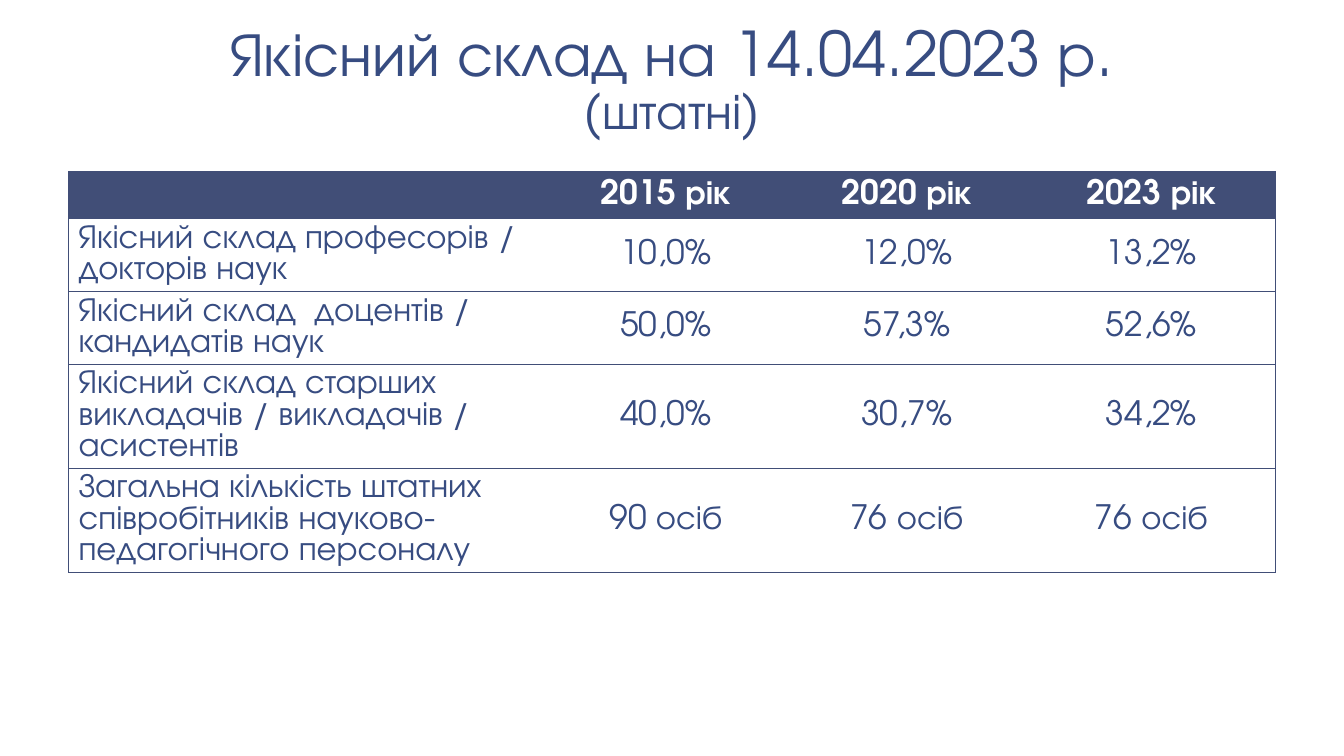
from dataclasses import dataclass

from pptx import Presentation
from pptx.dml.color import RGBColor
from pptx.enum.text import MSO_ANCHOR, MSO_AUTO_SIZE, PP_ALIGN
from pptx.oxml.ns import qn
from pptx.util import Inches, Pt
from lxml import etree

LEFT, CENTER = PP_ALIGN.LEFT, PP_ALIGN.CENTER
MIDDLE, BOTTOM = MSO_ANCHOR.MIDDLE, MSO_ANCHOR.BOTTOM
NO_FIT = MSO_AUTO_SIZE.NONE
PLAIN_TABLE = "{2D5ABB26-0587-4C30-8999-92F81FD0307C}"


@dataclass(frozen=True)
class Theme:
    """Colours, font and type sizes of the slide."""
    font: str = "TeX Gyre Adventor"
    ink: str = "374C81"
    navy: str = "414E77"
    white: str = "FFFFFF"
    title: int = 44
    subtitle: int = 36
    table: int = 24
    rule: float = 0.5


THEME = Theme()
TITLE = ("Якісний склад на 14.04.2023 р.", "(штатні)")
COL_WIDTHS = (4.73, 2.39, 2.39, 2.46)
ROW_HEIGHTS = (0.47, 0.72, 0.72, 1.03, 1.03)
STAFF = (
    ("", "2015 рік", "2020 рік", "2023 рік"),
    ("Якісний склад професорів / докторів наук", "10,0%", "12,0%", "13,2%"),
    ("Якісний склад  доцентів /  кандидатів наук", "50,0%", "57,3%", "52,6%"),
    ("Якісний склад старших викладачів / викладачів / асистентів",
     "40,0%", "30,7%", "34,2%"),
    ("Загальна кількість штатних співробітників науково-педагогічного персоналу",
     "90 осіб", "76 осіб", "76 осіб"),
)


def add_run(p, text, size, color, bold=False):
    """Add one formatted run to a paragraph."""
    r = p.add_run()
    r.text = text
    r.font.name = THEME.font
    r.font.size = Pt(size)
    r.font.bold = bold
    r.font.color.rgb = RGBColor.from_string(color)


def add_border(cell, side):
    """Draw a thin rule on one side of a cell."""
    ln = etree.SubElement(cell._tc.get_or_add_tcPr(), qn(f"a:ln{side}"),
                          w=str(Pt(THEME.rule)))
    fill = etree.SubElement(ln, qn("a:solidFill"))
    etree.SubElement(fill, qn("a:srgbClr"), val=THEME.navy)


def add_title(s, x, y, w, h):
    """Fill the title placeholder with a heading and a smaller second line."""
    sp = s.shapes.title
    sp.left, sp.top, sp.width, sp.height = map(Inches, (x, y, w, h))
    tf = sp.text_frame
    tf.word_wrap = True
    tf.auto_size = NO_FIT
    tf.vertical_anchor = BOTTOM
    tf.margin_left = tf.margin_right = Inches(0.13)
    tf.margin_top = tf.margin_bottom = Inches(0.07)
    p = tf.paragraphs[0]
    p.alignment = CENTER
    p.line_spacing = 0.85
    p.space_before = Pt(0)
    add_run(p, TITLE[0], THEME.title, THEME.ink)
    p.add_line_break()
    add_run(p, TITLE[1], THEME.subtitle, THEME.ink)


def fill_cell(cell, text, header, first, last):
    """Set the rules, fill and text of one table cell."""
    sides = ("L" if first else "") + ("R" if last else "") + "TB"
    for side in sides:
        add_border(cell, side)
    if header:
        cell.fill.solid()
        cell.fill.fore_color.rgb = RGBColor.from_string(THEME.navy)
    else:
        cell.fill.background()
    cell.vertical_anchor = MIDDLE
    p = cell.text_frame.paragraphs[0]
    p.alignment = LEFT if first else CENTER
    if text:
        add_run(p, text, THEME.table, THEME.white if header else THEME.ink, header)


def add_staff_table(s, x, y):
    """Build the staff table with its top left corner at x, y."""
    box = map(Inches, (x, y, sum(COL_WIDTHS), sum(ROW_HEIGHTS)))
    table = s.shapes.add_table(len(STAFF), len(COL_WIDTHS), *box).table
    table.horz_banding = False
    table._tbl.tblPr.find(qn("a:tableStyleId")).text = PLAIN_TABLE
    for col, width in zip(table.columns, COL_WIDTHS):
        col.width = Inches(width)
    for i, (values, height) in enumerate(zip(STAFF, ROW_HEIGHTS)):
        table.rows[i].height = Inches(height)
        for j, text in enumerate(values):
            fill_cell(table.cell(i, j), text, i == 0, j == 0, j == len(values) - 1)


def main():
    """Build and save the slide."""
    prs = Presentation()
    prs.slide_width, prs.slide_height = Inches(13.33), Inches(7.5)
    s = prs.slides.add_slide(prs.slide_layouts[5])
    s.background.fill.solid()
    s.background.fill.fore_color.rgb = RGBColor.from_string(THEME.white)
    add_title(s, 0, 0.08, 13.33, 1.38)
    add_staff_table(s, 0.68, 1.7)
    prs.save("out.pptx")


if __name__ == "__main__":
    main()
